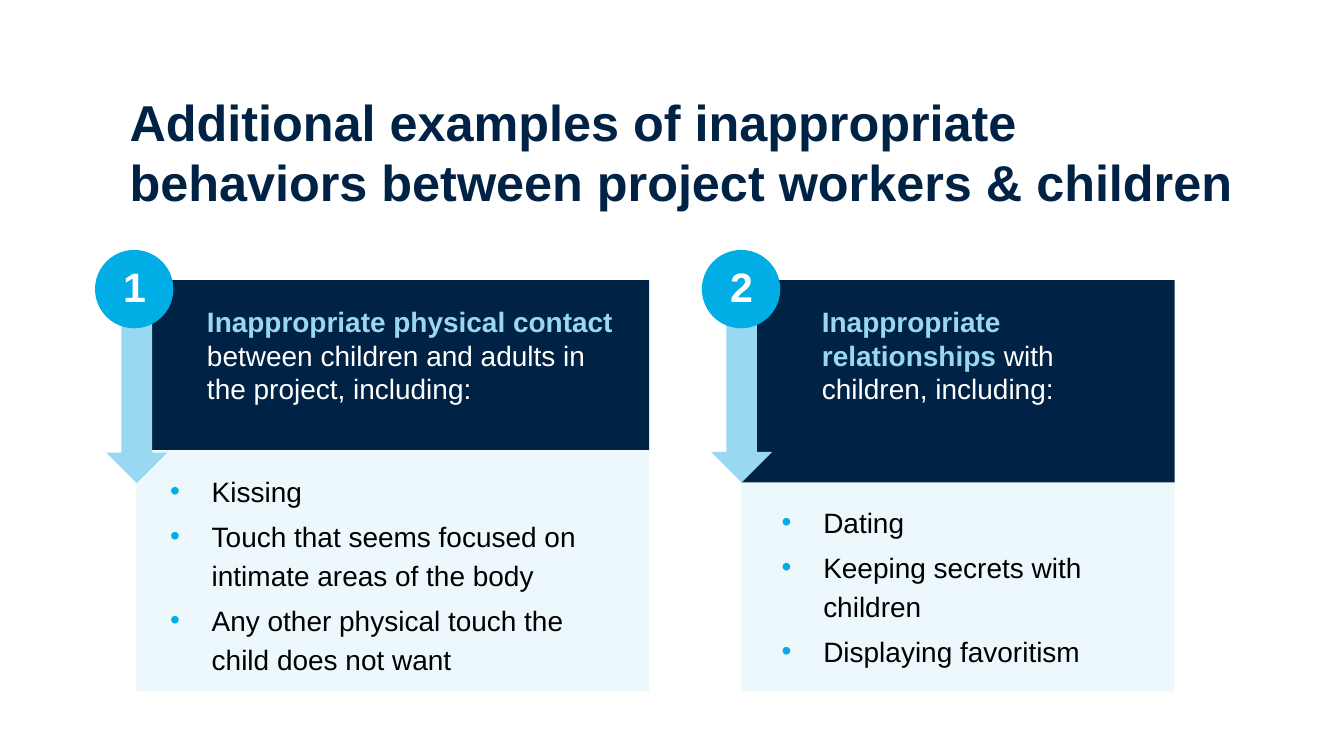
"""Build a slide with two numbered panels of inappropriate behaviors."""
from lxml.etree import SubElement
from pptx import Presentation
from pptx.dml.color import RGBColor
from pptx.enum.shapes import MSO_SHAPE
from pptx.enum.text import MSO_ANCHOR, MSO_AUTO_SIZE, PP_ALIGN
from pptx.oxml.ns import qn
from pptx.util import Pt

COLORS = {"navy": "002345", "sky": "9AD7F1", "cyan": "00ADE4",
          "white": "FFFFFF", "black": "000000"}
FONT = "Arial"
TITLE = "Additional examples of inappropriate behaviors between project workers & children"
PANELS = [
    {"num": "1", "left": 146.2, "width": 549.4, "split": 482, "center": 143.8,
     "arrow": (113.8, 326.2, 191.5),
     "head": (221.8, 326.2, 443.5, 108.7), "list": (182.2, 501.8, 465.8, 220.3),
     "lead": "Inappropriate physical contact ",
     "rest": "between children and adults in the project, including:",
     "items": ["Kissing", "Touch that seems focused on intimate areas of the body",
               "Any other physical touch the child does not want"]},
    {"num": "2", "left": 794.2, "width": 464.4, "split": 517, "center": 794,
     "arrow": (761.8, 335.5, 181.4),
     "head": (880.6, 326.2, 313.2, 108.7), "list": (837.4, 535, 356.4, 177.8),
     "lead": "Inappropriate relationships ", "rest": "with children, including:",
     "items": ["Dating", "Keeping secrets with children", "Displaying favoritism"]},
]
TOP, BOTTOM = 300.2, 740.9
DISC, DISC_TOP = 84, 267.8
INDENT = 44.64


def place(slide, kind, box, color, alpha=None):
    shape = slide.shapes.add_shape(kind, *map(Pt, box))
    shape.shadow.inherit = False
    shape.line.fill.background()
    shape.fill.solid()
    shape.fill.fore_color.rgb = RGBColor.from_string(COLORS[color])
    if alpha:
        tint = shape.fill._xPr.find(".//" + qn("a:srgbClr"))
        SubElement(tint, qn("a:alpha"), val=str(alpha * 1000))


def frame(slide, box, inset=(0, 0), grow=True):
    text = slide.shapes.add_textbox(*map(Pt, box)).text_frame
    text.word_wrap = True
    text.auto_size = MSO_AUTO_SIZE.SHAPE_TO_FIT_TEXT if grow else MSO_AUTO_SIZE.NONE
    text.margin_left = text.margin_right = Pt(inset[0])
    text.margin_top = text.margin_bottom = Pt(inset[1])
    return text


def write(para, words, size, color, bold=False):
    run = para.add_run()
    run.text = words
    font = run.font
    font.name, font.size, font.bold = FONT, Pt(size), bold
    font.color.rgb = RGBColor.from_string(COLORS[color])
    return run


def bullet(para):
    props = para._p.get_or_add_pPr()
    props.set("marL", str(Pt(INDENT)))
    props.set("indent", str(-Pt(INDENT)))
    tint = SubElement(props, qn("a:buClr"))
    SubElement(tint, qn("a:srgbClr"), val=COLORS["cyan"])
    SubElement(props, qn("a:buFont"), typeface=FONT)
    SubElement(props, qn("a:buChar"), char="•")
    para.line_spacing, para.space_after = Pt(42.2), Pt(6)


def panel(slide, data):
    left, width, split = data["left"], data["width"], data["split"]
    place(slide, MSO_SHAPE.RECTANGLE, (left, split, width, BOTTOM - split), "sky", 17)
    place(slide, MSO_SHAPE.RECTANGLE, (left, TOP, width, split - TOP), "navy")

    para = frame(slide, data["head"]).paragraphs[0]
    write(para, data["lead"], 30, "sky", True)
    write(para, data["rest"], 30, "white")

    text = frame(slide, data["list"])
    for i, item in enumerate(data["items"]):
        para = text.add_paragraph() if i else text.paragraphs[0]
        bullet(para)
        write(para, item, 30, "black")

    x, y, tall = data["arrow"]
    place(slide, MSO_SHAPE.DOWN_ARROW, (x, y, 65.5, tall), "sky")
    mid = data["center"]
    place(slide, MSO_SHAPE.OVAL, (mid - DISC / 2, DISC_TOP, DISC, DISC), "cyan")
    text = frame(slide, (mid - 33, 288, 67, 59.8), (4.3, 4.3), False)
    text.vertical_anchor = MSO_ANCHOR.MIDDLE
    para = text.paragraphs[0]
    para.alignment, para.line_spacing = PP_ALIGN.CENTER, Pt(30)
    run = write(para, data["num"], 44, "white", True)
    run._r.get_or_add_rPr().set("spc", "-60")


def main():
    deck = Presentation()
    deck.slide_width, deck.slide_height = Pt(1440), Pt(810)
    slide = deck.slides.add_slide(deck.slide_layouts[6])
    title = frame(slide, (131.8, 93.6, 1211.8, 138.2), (7.2, 3.6))
    write(title.paragraphs[0], TITLE, 54, "navy", True)
    for data in PANELS:
        panel(slide, data)
    deck.save("out.pptx")


if __name__ == "__main__":
    main()
